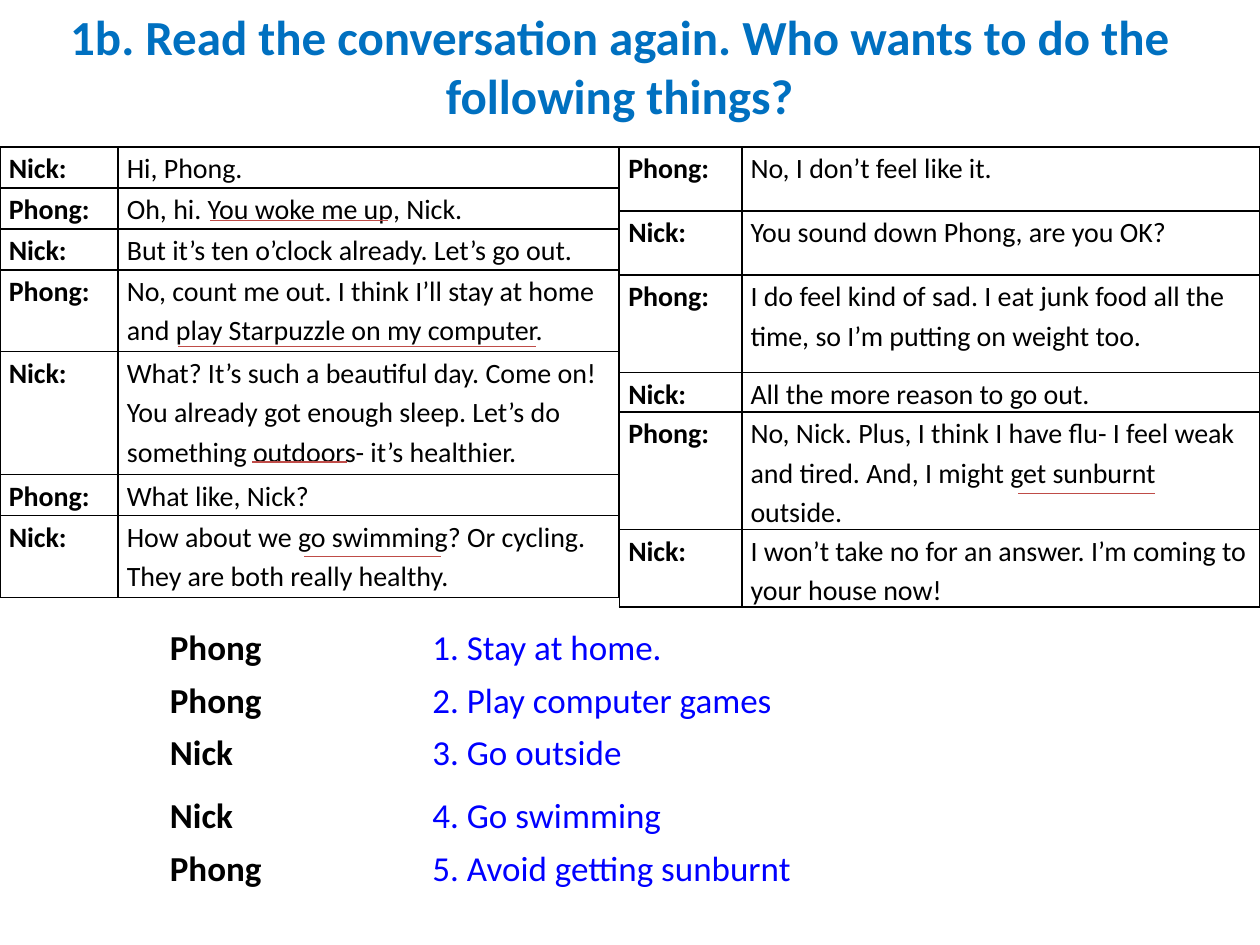
"""Build a reading slide with two dialogue tables and an answer list."""
from dataclasses import dataclass

from lxml import etree
from pptx import Presentation
from pptx.dml.color import RGBColor
from pptx.enum.shapes import MSO_CONNECTOR
from pptx.enum.text import MSO_ANCHOR, MSO_AUTO_SIZE, PP_ALIGN
from pptx.oxml import parse_xml
from pptx.oxml.ns import nsdecls, qn
from pptx.util import Inches, Pt

TOP = MSO_ANCHOR.TOP
GROW = MSO_AUTO_SIZE.SHAPE_TO_FIT_TEXT
LEFT, CENTER = PP_ALIGN.LEFT, PP_ALIGN.CENTER
STRAIGHT = MSO_CONNECTOR.STRAIGHT
WIDTH, HEIGHT = Inches(10), Inches(7.5)
COLS, ROWS = 120, 90
TITLE_ONLY = 5


@dataclass(frozen=True)
class Theme:
    font: str = "Calibri"
    ink: str = "000000"
    head: str = "0070C0"
    task: str = "0000FF"
    mark: str = "BF4C48"
    title: int = 28
    list: int = 20
    cell: int = 16
    rule: float = 0.75
    edge: int = 1


def put_text(frame, text, *, font, size, color, bold=False, align=LEFT, space=1.0):
    frame.word_wrap = True
    para = frame.paragraphs[0]
    para.alignment, para.line_spacing = align, space
    para.space_before = Pt(0)
    run = para.add_run()
    run.text = text
    run.font.name, run.font.size, run.font.bold = font, Pt(size), bold
    run.font.color.rgb = RGBColor.from_string(color)


class Page:
    def __init__(self, slide, theme):
        self.slide, self.theme = slide, theme

    def box(self, x, y, w, h):
        return [round(n) for n in (x * WIDTH / COLS, y * HEIGHT / ROWS,
                                   w * WIDTH / COLS, h * HEIGHT / ROWS)]

    def title(self, text, *area):
        shape = self.slide.shapes.title
        shape.left, shape.top, shape.width, shape.height = self.box(*area)
        frame = shape.text_frame
        frame.auto_size, frame.vertical_anchor = GROW, TOP
        put_text(frame, text, font=self.theme.font, size=self.theme.title,
                 color=self.theme.head, bold=True, align=CENTER)

    def text(self, text, *area, color, bold=False):
        frame = self.slide.shapes.add_textbox(*self.box(*area)).text_frame
        put_text(frame, text, font=self.theme.font, size=self.theme.list,
                 color=color, bold=bold)
        frame.auto_size = GROW

    def edges(self, cell):
        props = cell._tc.get_or_add_tcPr()
        for spot, side in enumerate("LRTB"):
            props.insert(spot, parse_xml(
                f'<a:ln{side} {nsdecls("a")} w="{Pt(self.theme.edge)}"><a:solidFill>'
                f'<a:srgbClr val="{self.theme.ink}"/></a:solidFill></a:ln{side}>'))

    def table(self, talk, x, y, wides, highs):
        area = self.box(x, y, sum(wides), sum(highs))
        grid = self.slide.shapes.add_table(len(talk), len(wides), *area).table
        grid.first_row = grid.horz_banding = False
        for col, wide in zip(grid.columns, wides):
            col.width = self.box(0, 0, wide, 0)[2]
        for row, high, pair in zip(grid.rows, highs, talk):
            row.height = self.box(0, 0, 0, high)[3]
            for spot, (cell, text) in enumerate(zip(row.cells, pair)):
                cell.margin_left = cell.margin_right = Inches(0.07)
                cell.margin_top = cell.margin_bottom = 0
                cell.fill.background()
                self.edges(cell)
                put_text(cell.text_frame, text, font=self.theme.font,
                         size=self.theme.cell, color=self.theme.ink,
                         bold=spot == 0, space=1.15)

    def line(self, start, end, y):
        x, y, wide, _ = self.box(start, y, end - start, 0)
        rule = self.slide.shapes.add_connector(STRAIGHT, x, y, x + wide, y)
        rule.line.color.rgb = RGBColor.from_string(self.theme.mark)
        rule.line.width = Pt(self.theme.rule)
        etree.SubElement(rule._element.spPr, qn("a:effectLst"))


FIRST = [
    ("Nick:", "Hi, Phong."),
    ("Phong:", "Oh, hi. You woke me up, Nick."),
    ("Nick:", "But it’s ten o’clock already. Let’s go out."),
    ("Phong:", "No, count me out. I think I’ll stay at home and play "
               "Starpuzzle on my computer."),
    ("Nick:", "What? It’s such a beautiful day. Come on! You already got "
              "enough sleep. Let’s do something outdoors- it’s healthier."),
    ("Phong:", "What like, Nick?"),
    ("Nick:", "How about we go swimming? Or cycling. They are both really "
              "healthy."),
]
SECOND = [
    ("Phong:", "No, I don’t feel like it."),
    ("Nick:", "You sound down Phong, are you OK?"),
    ("Phong:", "I do feel kind of sad. I eat junk food all the time, so I’m "
               "putting on weight too."),
    ("Nick:", "All the more reason to go out."),
    ("Phong:", "No, Nick. Plus, I think I have flu- I feel weak and tired. "
               "And, I might get sunburnt outside."),
    ("Nick:", "I won’t take no for an answer. I’m coming to your house now!"),
]
TASKS = [
    (59, "Phong", "1. Stay at home."),
    (64, "Phong", "2. Play computer games"),
    (69, "Nick", "3. Go outside"),
    (75, "Nick", "4. Go swimming"),
    (80, "Phong", "5. Avoid getting sunburnt"),
]
MARKS = [(20, 37, 21), (17, 51, 33), (24, 33, 44), (29, 42, 53), (97, 110, 47)]


def main():
    deck = Presentation()
    deck.slide_width, deck.slide_height = WIDTH, HEIGHT
    theme = Theme()
    page = Page(deck.slides.add_slide(deck.slide_layouts[TITLE_ONLY]), theme)
    page.title("1b. Read the conversation again. Who wants to do the "
               "following things?", 3, 0, 112, 12.5)
    line = 3.9
    page.table(FIRST, 0, 14, (11.25, 47.7),
               [line * n for n in (1, 1, 1, 2, 3, 1, 2)])
    page.table(SECOND, 59, 14, (11.65, 49.35), (6.1, 6.1, 9.3, 3.75, 11.2, 7.1))
    for y, name, task in TASKS:
        page.text(task, 40, y, 50, 5.25, color=theme.task)
        page.text(name, 15, y, 19, 5.25, color=theme.ink, bold=True)
    for mark in MARKS:
        page.line(*mark)
    deck.save("out.pptx")


if __name__ == "__main__":
    main()
